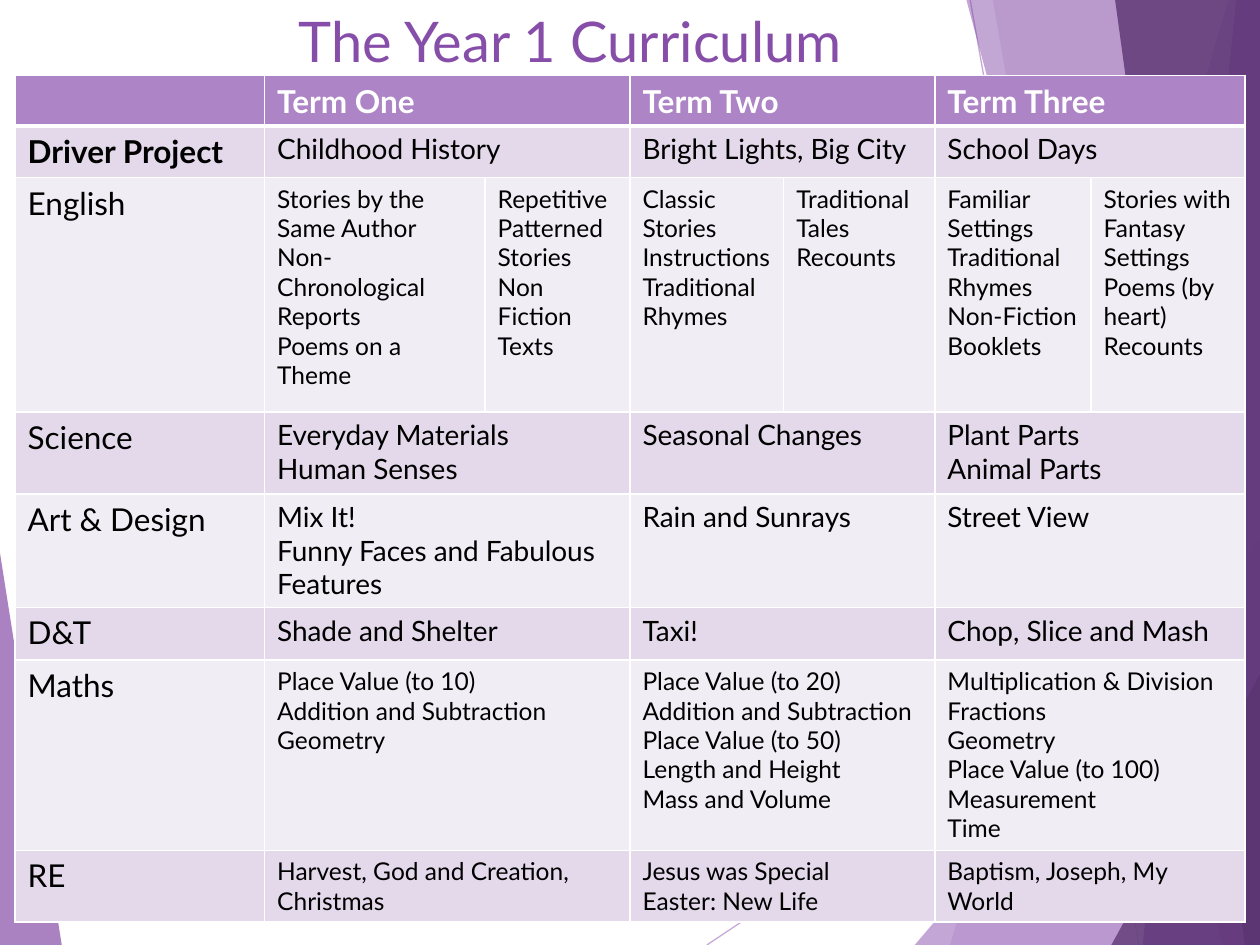
import pptx
import pptx.dml.color
import pptx.enum.shapes
import pptx.oxml
import pptx.oxml.ns
import pptx.util

FONT = "Lato"
LILAC, PLUM, DARK = "AD84C6", "874EA9", "5A3471"
WHITE, BLACK = "FFFFFF", "000000"
BANDS = ("E3D9EA", "F1EDF5")
UNIT = pptx.util.Inches(10) // 10
WIDE, HIGH = 10, 7.5
COLS = (1.98, 1.75, 1.15, 1.22, 1.2, 1.24, 1.22)

LINES = (
    ((5.61, HIGH), (WIDE, 4.57)),
    ((7.7, 0), (9.04, HIGH)),
)
FACETS = (
    (LILAC, 36, ((9.75, 0), (7.54, HIGH), (WIDE, HIGH), (WIDE, 0))),
    (LILAC, 20, ((7.88, 0), (9.19, HIGH), (WIDE, HIGH), (WIDE, 0))),
    (LILAC, 72, ((7.26, HIGH), (WIDE, 4.29), (WIDE, HIGH))),
    (PLUM, 50, ((7.67, 0), (9.7, HIGH), (WIDE, HIGH), (WIDE, 0))),
    (PLUM, 66, ((9.81, 0), (9.07, HIGH), (WIDE, HIGH), (WIDE, 0))),
    (DARK, 80, ((8.85, 0), (9.88, HIGH), (WIDE, HIGH), (WIDE, 0))),
    (DARK, 76, ((8.82, HIGH), (WIDE, 5.35), (WIDE, HIGH))),
    (PLUM, 70, ((0, 4.39), (0.49, HIGH), (0, HIGH))),
)
ROWS = (
    (0.39, 18, "", ("Term One", "Term Two", "Term Three")),
    (0.41, 16, "Driver Project",
     ("Childhood History", "Bright Lights, Big City", "School Days")),
    (1.86, 14, "English",
     ("Stories by the Same Author\nNon-Chronological Reports\nPoems on a Theme",
      "Repetitive Patterned Stories\nNon Fiction Texts",
      "Classic Stories\nInstructions\nTraditional Rhymes",
      "Traditional Tales\nRecounts",
      "Familiar Settings\nTraditional Rhymes\nNon-Fiction Booklets",
      "Stories with Fantasy Settings\nPoems (by heart)\nRecounts")),
    (0.65, 16, "Science",
     ("Everyday Materials\nHuman Senses", "Seasonal Changes",
      "Plant Parts\nAnimal Parts")),
    (0.9, 16, "Art & Design",
     ("Mix It!\nFunny Faces and Fabulous Features", "Rain and Sunrays",
      "Street View")),
    (0.42, 16, "D&T", ("Shade and Shelter", "Taxi!", "Chop, Slice and Mash")),
    (1.51, 14, "Maths",
     ("Place Value (to 10)\nAddition and Subtraction\nGeometry",
      "Place Value (to 20)\nAddition and Subtraction\nPlace Value (to 50)\n"
      "Length and Height\nMass and Volume",
      "Multiplication & Division\nFractions\nGeometry\nPlace Value (to 100)\n"
      "Measurement\nTime")),
    (0.56, 14, "RE",
     ("Harvest, God and Creation, Christmas",
      "Jesus was Special\nEaster: New Life", "Baptism, Joseph, My World")),
)


def grid(*cells):
    """Turn grid steps, a tenth of the slide's width each, into lengths."""
    return [pptx.util.Emu(round(cell * UNIT)) for cell in cells]


def paint(tone, code, alpha=100):
    """Set a fill or line colour from a hex string, with its opacity."""
    tone.rgb = pptx.dml.color.RGBColor.from_string(code)
    if alpha < 100:
        node = tone._xFill.find(pptx.oxml.ns.qn("a:srgbClr"))
        item = pptx.oxml.parse_xml(
            f'<a:alpha {pptx.oxml.ns.nsdecls("a")} val="{alpha * 1000}"/>')
        node.append(item)


def write(frame, text, size, code, bold=False):
    """Write each line of the text as a paragraph with one run."""
    for i, part in enumerate(text.split("\n")):
        para = frame.add_paragraph() if i else frame.paragraphs[0]
        run = para.add_run()
        run.text = part
        run.font.name = FONT
        run.font.size = pptx.util.Pt(size)
        run.font.bold = bold
        paint(run.font.color, code)


def draw_line(slide, start, end):
    """Draw a thin translucent line."""
    line = slide.shapes.add_connector(
        pptx.enum.shapes.MSO_CONNECTOR.STRAIGHT, *grid(*start, *end))
    line.line.width = pptx.util.Pt(0.75)
    line.line.fill.solid()
    paint(line.line.fill.fore_color, LILAC, 70)
    line._element.spPr.append(pptx.oxml.parse_xml(
        f'<a:effectLst {pptx.oxml.ns.nsdecls("a")}/>'))


def draw_facet(slide, code, alpha, points):
    """Draw a translucent polygon without outline."""
    dots = [grid(*point) for point in points]
    pen = slide.shapes.build_freeform(*dots[0])
    pen.add_line_segments(dots[1:], close=True)
    facet = pen.convert_to_shape()
    facet.shadow.inherit = False
    facet.fill.solid()
    paint(facet.fill.fore_color, code, alpha)
    facet.line.fill.background()


def add_title(slide):
    """Add the slide's heading."""
    box = slide.shapes.add_textbox(*grid(2.17, 0, 7.83, 1.44))
    box.text_frame.word_wrap = True
    write(box.text_frame, " The Year 1 Curriculum", 32, PLUM)


def style(cell, code, top, base):
    """Give a cell white borders and a plain fill."""
    props = cell._tc.get_or_add_tcPr()
    for side, width in zip("LRTB", (1, 1, top, base)):
        props.append(pptx.oxml.parse_xml(
            f'<a:ln{side} {pptx.oxml.ns.nsdecls("a")} w="{pptx.util.Pt(width)}">'
            f'<a:solidFill><a:srgbClr val="{WHITE}"/></a:solidFill></a:ln{side}>'))
    cell.fill.solid()
    paint(cell.fill.fore_color, code)


def fill_row(table, r, size, label, texts):
    """Style one table row, merge its term columns and write its words."""
    head = r == 0
    ink = WHITE if head else BLACK
    back = LILAC if head else BANDS[(r - 1) % 2]
    for c in range(len(COLS)):
        style(table.cell(r, c), back, 3 if r == 1 else 1, 3 if head else 1)
    if label:
        write(table.cell(r, 0).text_frame, label, 18, ink, r == 1)
    step = (len(COLS) - 1) // len(texts)
    for i, text in enumerate(texts):
        c = 1 + i * step
        cell = table.cell(r, c)
        if step > 1:
            cell.merge(table.cell(r, c + step - 1))
        write(cell.text_frame, text, size, ink, head)


def add_plan(slide):
    """Add the table of subjects by term."""
    high = sum(row[0] for row in ROWS)
    table = slide.shapes.add_table(
        len(ROWS), len(COLS), *grid(0.12, 0.6, sum(COLS), high)).table
    for col, width in zip(table.columns, grid(*COLS)):
        col.width = width
    for r, (tall, size, label, texts) in enumerate(ROWS):
        table.rows[r].height = grid(tall)[0]
        fill_row(table, r, size, label, texts)


def main():
    """Build and save the slide."""
    deck = pptx.Presentation()
    deck.slide_width, deck.slide_height = grid(WIDE, HIGH)
    slide = deck.slides.add_slide(deck.slide_layouts[6])
    for ends in LINES:
        draw_line(slide, *ends)
    for facet in FACETS:
        draw_facet(slide, *facet)
    add_title(slide)
    add_plan(slide)
    deck.save("out.pptx")


if __name__ == "__main__":
    main()
